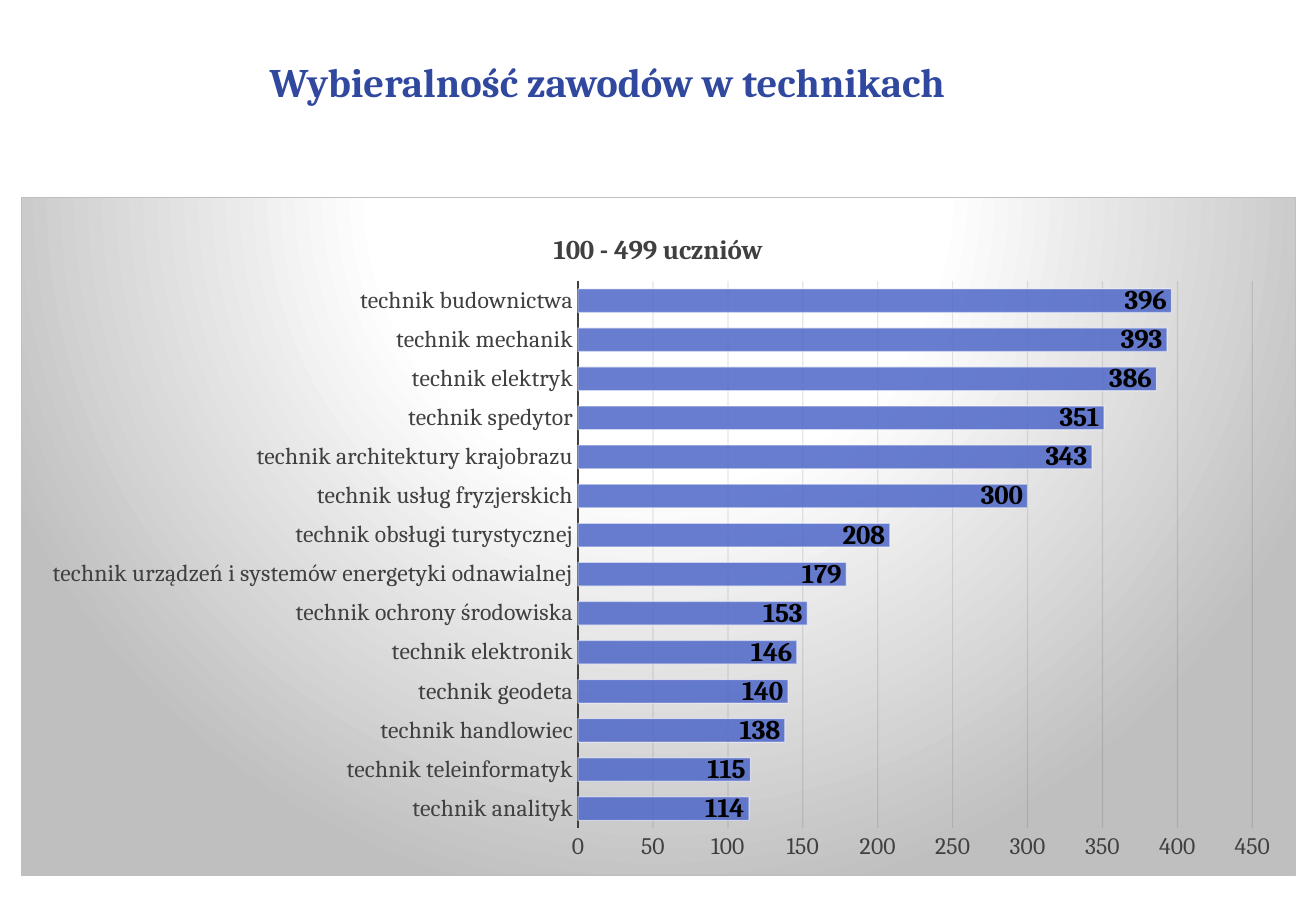
from lxml.etree import SubElement
from pptx import Presentation
from pptx.chart.data import CategoryChartData
from pptx.dml.color import RGBColor
from pptx.enum.chart import XL_CHART_TYPE, XL_LABEL_POSITION, XL_TICK_MARK
from pptx.enum.text import MSO_ANCHOR, PP_ALIGN
from pptx.oxml import parse_xml
from pptx.oxml.ns import nsdecls, qn
from pptx.util import Cm, Pt

STUDENTS = {
    "technik analityk": 114,
    "technik teleinformatyk": 115,
    "technik handlowiec": 138,
    "technik geodeta": 140,
    "technik elektronik": 146,
    "technik ochrony środowiska": 153,
    "technik urządzeń i systemów energetyki odnawialnej": 179,
    "technik obsługi turystycznej": 208,
    "technik usług fryzjerskich": 300,
    "technik architektury krajobrazu": 343,
    "technik spedytor": 351,
    "technik elektryk": 386,
    "technik mechanik": 393,
    "technik budownictwa": 396,
}


def colour(value):
    return RGBColor.from_string(value)


def set_opacity(element, *percentages):
    for node, percentage in zip(element.iter(qn("a:srgbClr")), percentages):
        SubElement(node, qn("a:alpha")).set("val", str(percentage * 1000))


def set_layout(element, index, **settings):
    for layout in element.findall(qn("c:layout")):
        element.remove(layout)
    items = "".join(f'<c:{name} val="{value}"/>' for name, value in settings.items())
    element.insert(index, parse_xml(
        f'<c:layout {nsdecls("c")}><c:manualLayout>{items}</c:manualLayout></c:layout>'))


class SlideBuilder:
    font_name = "Cambria"
    title_colour = "31489F"
    text_colour = "404040"
    bar_colour = "4E67C8"
    edge_colour = "BFBFBF"

    def __init__(self, presentation):
        self.slide = presentation.slides.add_slide(presentation.slide_layouts[5])

    def style_font(self, font, size, value, bold=False):
        font.name = self.font_name
        font.size = Pt(size)
        font.bold = bold
        font.color.rgb = colour(value)

    def style_line(self, line, value, width=0.75):
        line.color.rgb = colour(value)
        line.width = Pt(width)

    def add_title(self, text, left, top, width, height):
        shape = self.slide.shapes.title
        shape.left, shape.top, shape.width, shape.height = left, top, width, height
        frame = shape.text_frame
        frame.text = text
        frame.word_wrap = True
        frame.vertical_anchor = MSO_ANCHOR.MIDDLE
        paragraph = frame.paragraphs[0]
        paragraph.alignment = PP_ALIGN.LEFT
        self.style_font(paragraph.font, 24, self.title_colour, True)

    def add_bar_chart(self, title, values, left, top, width, height):
        data = CategoryChartData()
        data.categories = list(values)
        data.add_series("Series 1", list(values.values()))
        chart = self.slide.shapes.add_chart(
            XL_CHART_TYPE.BAR_CLUSTERED, left, top, width, height, data).chart
        chart.has_legend = False
        self.style_font(chart.font, 14, "000000")
        self.style_chart_title(chart, title)
        self.style_axes(chart)
        self.style_bars(chart.plots[0])
        self.style_background(chart)
        set_layout(chart.element.find(".//" + qn("c:plotArea")), 0, layoutTarget="inner",
                   xMode="edge", yMode="edge", x=0.437, y=0.124, w=0.529, h=0.807)

    def style_chart_title(self, chart, text):
        chart.has_title = True
        frame = chart.chart_title.text_frame
        frame.text = text
        self.style_font(frame.paragraphs[0].font, 16, self.text_colour, True)
        chart.chart_title.include_in_layout = False
        set_layout(chart.element.find(".//" + qn("c:title")), 1,
                   xMode="edge", yMode="edge", x=0.414, y=0.045)

    def style_axes(self, chart):
        for axis in (chart.category_axis, chart.value_axis):
            axis.major_tick_mark = XL_TICK_MARK.NONE
            axis.minor_tick_mark = XL_TICK_MARK.NONE
            self.style_font(axis.tick_labels.font, 14, self.text_colour)
        chart.category_axis.has_major_gridlines = False
        self.style_line(chart.category_axis.format.line, self.text_colour, 1.5)
        value_axis = chart.value_axis
        value_axis.minimum_scale, value_axis.maximum_scale = 0, 450
        value_axis.major_unit = 50
        value_axis.format.line.fill.background()
        value_axis.has_major_gridlines = True
        self.style_line(value_axis.major_gridlines.format.line, "0D0D0D")
        set_opacity(chart.element.find(".//" + qn("c:majorGridlines")), 10)

    def style_bars(self, plot):
        plot.gap_width = 65
        plot.vary_by_categories = False
        series = plot.series[0]
        series.format.fill.solid()
        series.format.fill.fore_color.rgb = colour(self.bar_colour)
        self.style_line(series.format.line, "FFFFFF")
        set_opacity(series.format.fill and plot._element, 85, 50)
        labels = series.data_labels
        labels.show_value = True
        labels.position = XL_LABEL_POSITION.INSIDE_END
        self.style_font(labels.font, 16, "000000", True)

    def style_background(self, chart):
        stops = "".join(
            f'<a:gs pos="{position * 1000}"><a:srgbClr val="{value}"/></a:gs>'
            for position, value in ((0, "FFFFFF"), (39, "FFFFFF"), (100, self.edge_colour)))
        chart.element.find(qn("c:chart")).addnext(parse_xml(
            f'<c:spPr {nsdecls("c", "a")}><a:gradFill><a:gsLst>{stops}</a:gsLst>'
            '<a:path path="circle">'
            '<a:fillToRect l="50000" t="-80000" r="50000" b="180000"/></a:path></a:gradFill>'
            f'<a:ln w="{Pt(0.75)}"><a:solidFill><a:srgbClr val="{self.edge_colour}"/>'
            '</a:solidFill></a:ln></c:spPr>'))


def main():
    presentation = Presentation()
    presentation.slide_width, presentation.slide_height = Cm(27.51), Cm(19.05)
    builder = SlideBuilder(presentation)
    builder.add_title("Wybieralność zawodów w technikach",
                      Cm(5.38), Cm(0.41), Cm(21.72), Cm(2.59))
    builder.add_bar_chart("100 - 499 uczniów", STUDENTS,
                          Cm(0.43), Cm(4.11), Cm(26.67), Cm(14.2))
    presentation.save("out.pptx")


if __name__ == "__main__":
    main()
